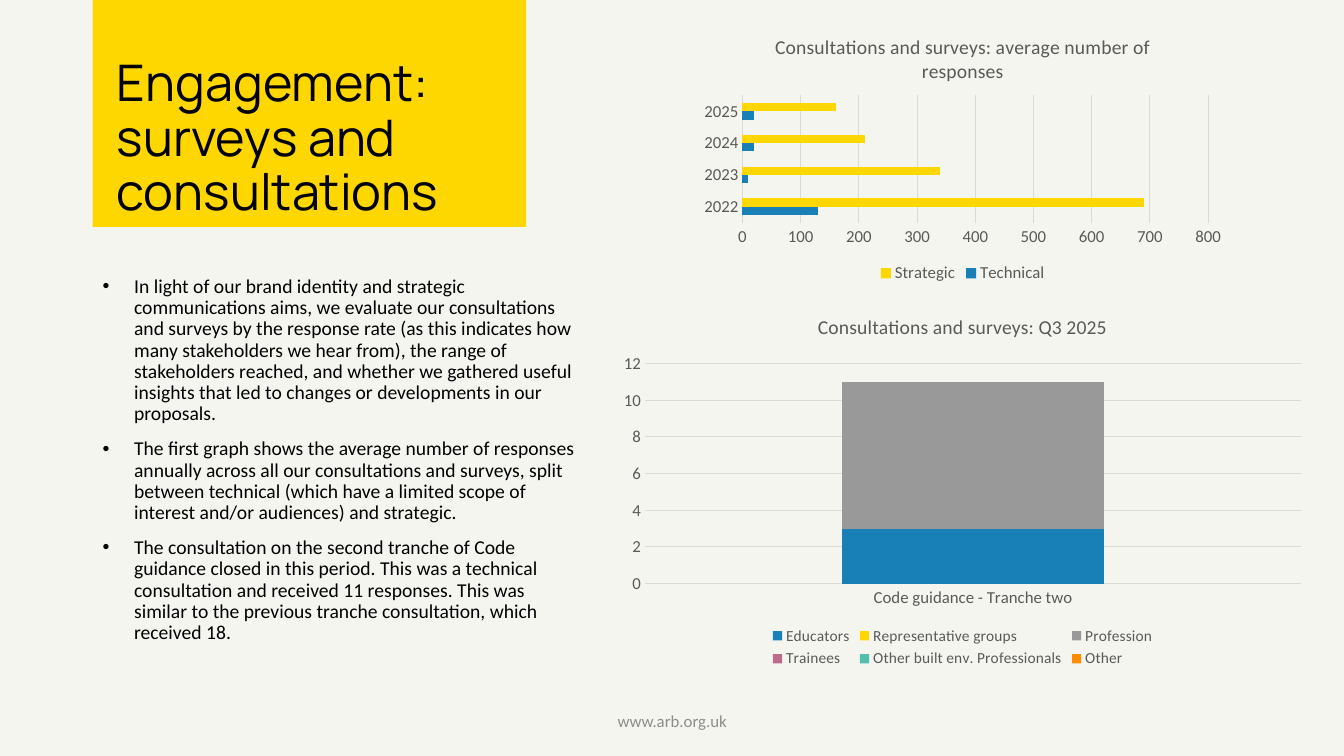
"""Build the engagement slide on surveys and consultations."""
from lxml import etree
from pptx import Presentation
from pptx.chart.data import CategoryChartData
from pptx.dml.color import RGBColor
from pptx.enum import chart as kinds, text
from pptx.oxml import ns
from pptx.util import Pt

PAPER = RGBColor(0xF5, 0xF5, 0xEF)
BLACK = RGBColor(0, 0, 0)
YELLOW = RGBColor(0xFF, 0xD7, 0x00)
BLUE = RGBColor(0x19, 0x80, 0xB7)
GREY = RGBColor(0x99, 0x99, 0x99)
PINK = RGBColor(0xBB, 0x6B, 0x8B)
TEAL = RGBColor(0x52, 0xBF, 0xAB)
ORANGE = RGBColor(0xFF, 0x8C, 0x00)
LABEL = RGBColor(0x59, 0x59, 0x59)
RULE = RGBColor(0xD9, 0xD9, 0xD9)
FOOTER = RGBColor(0x8C, 0x8C, 0x8C)

TITLE = "Engagement: surveys and consultations"
POINTS = [
    "In light of our brand identity and strategic communications aims, we evaluate our "
    "consultations and surveys by the response rate (as this indicates how many stakeholders "
    "we hear from), the range of stakeholders reached, and whether we gathered useful insights "
    "that led to changes or developments in our proposals.",
    "The first graph shows the average number of responses annually across all our "
    "consultations and surveys, split between technical (which have a limited scope of "
    "interest and/or audiences) and strategic.",
    "The consultation on the second tranche of Code guidance closed in this period. This was a "
    "technical consultation and received 11 responses. This was similar to the previous "
    "tranche consultation, which received 18.",
]
WEBSITE = "www.arb.org.uk"
CHARTS = [
    {
        "title": "Consultations and surveys: average number of responses",
        "kind": kinds.XL_CHART_TYPE.BAR_CLUSTERED,
        "place": (495.4, 13.7, 384.5, 191.5),
        "categories": ["2022", "2023", "2024", "2025"],
        "series": [
            ("Technical", [130, 10, 20, 20], BLUE),
            ("Strategic", [690, 340, 210, 160], YELLOW),
        ],
        "plot": {"gap_width": 182, "overlap": 0},
        "scale": {"minimum_scale": 0, "maximum_scale": 800, "major_unit": 100},
        "legend_size": 12,
    },
    {
        "title": "Consultations and surveys: Q3 2025",
        "kind": kinds.XL_CHART_TYPE.COLUMN_STACKED,
        "place": (435.6, 212.4, 504, 267.8),
        "categories": ["Code guidance - Tranche two"],
        "series": [
            ("Educators", [3], BLUE),
            ("Representative groups", [None], YELLOW),
            ("Profession", [8], GREY),
            ("Trainees", [None], PINK),
            ("Other built env. Professionals", [None], TEAL),
            ("Other", [None], ORANGE),
        ],
        "plot": {"gap_width": 150, "overlap": 100},
        "scale": {"minimum_scale": 0, "maximum_scale": 12, "major_unit": 2},
        "legend_size": 11,
    },
]


def assign(target, values):
    for name, value in values.items():
        setattr(target, name, value)


def style_font(font, size, color, name="Calibri"):
    assign(font, {"size": Pt(size), "name": name, "bold": False})
    font.color.rgb = color


def place(shape, left, top, width, height):
    assign(shape, {"left": Pt(left), "top": Pt(top), "width": Pt(width), "height": Pt(height)})


def add_box(page, *area):
    frame = page.shapes.add_textbox(*map(Pt, area)).text_frame
    frame.word_wrap = True
    return frame


def add_title(page):
    title = page.shapes.title
    place(title, 66.2, 0, 309.6, 162)
    title.fill.solid()
    title.fill.fore_color.rgb = YELLOW
    frame = title.text_frame
    frame.text = TITLE
    assign(frame, {
        "auto_size": text.MSO_AUTO_SIZE.NONE, "word_wrap": True,
        "vertical_anchor": text.MSO_ANCHOR.BOTTOM,
        "margin_left": Pt(17.3), "margin_right": Pt(7.2),
        "margin_top": Pt(3.6), "margin_bottom": Pt(3.6),
    })
    para = frame.paragraphs[0]
    assign(para, {"alignment": text.PP_ALIGN.LEFT, "line_spacing": 0.9})
    style_font(para.font, 36, BLACK, "Manrope")


def add_points(page):
    frame = add_box(page, 66.2, 194, 352.1, 336)
    for index, point in enumerate(POINTS):
        para = frame.add_paragraph() if index else frame.paragraphs[0]
        para.text = point
        assign(para, {"line_spacing": 0.9, "space_before": Pt(10 if index else 0)})
        settings = para._p.get_or_add_pPr()
        settings.set("marL", str(Pt(22.5)))
        settings.set("indent", str(Pt(-22.5)))
        etree.SubElement(settings, ns.qn("a:buFont")).set("typeface", "Arial")
        etree.SubElement(settings, ns.qn("a:buChar")).set("char", "•")
        style_font(para.font, 14, BLACK)


def add_footer(page):
    frame = add_box(page, 318.2, 500.4, 324, 28.8)
    frame.vertical_anchor = text.MSO_ANCHOR.MIDDLE
    para = frame.paragraphs[0]
    para.text = WEBSITE
    para.alignment = text.PP_ALIGN.CENTER
    style_font(para.font, 12, FOOTER)


def add_graph(page, details):
    data = CategoryChartData()
    data.categories = details["categories"]
    for name, values, _ in details["series"]:
        data.add_series(name, values)
    graph = page.shapes.add_chart(details["kind"], *map(Pt, details["place"]), data).chart
    style_font(graph.font, 10, BLACK)

    graph.has_title = True
    graph.chart_title.include_in_layout = False
    heading = graph.chart_title.text_frame
    heading.text = details["title"]
    style_font(heading.paragraphs[0].font, 14, LABEL)

    graph.has_legend = True
    assign(graph.legend, {
        "position": kinds.XL_LEGEND_POSITION.BOTTOM, "include_in_layout": False})
    style_font(graph.legend.font, details["legend_size"], LABEL)

    for axis in (graph.category_axis, graph.value_axis):
        assign(axis, {"major_tick_mark": kinds.XL_TICK_MARK.NONE,
                      "minor_tick_mark": kinds.XL_TICK_MARK.NONE})
        style_font(axis.tick_labels.font, 12, LABEL)
    assign(graph.value_axis, details["scale"])
    graph.value_axis.has_major_gridlines = True
    graph.value_axis.format.line.fill.background()
    for line in (graph.category_axis.format.line, graph.value_axis.major_gridlines.format.line):
        line.color.rgb = RULE
        line.width = Pt(0.75)

    plot = graph.plots[0]
    assign(plot, {"vary_by_categories": False, **details["plot"]})
    for series, (_, _, color) in zip(plot.series, details["series"]):
        series.invert_if_negative = False
        series.format.fill.solid()
        series.format.fill.fore_color.rgb = color


def main():
    deck = Presentation()
    assign(deck, {"slide_width": Pt(960), "slide_height": Pt(540)})
    page = deck.slides.add_slide(deck.slide_layouts[5])
    page.background.fill.solid()
    page.background.fill.fore_color.rgb = PAPER
    add_title(page)
    add_points(page)
    add_footer(page)
    for details in CHARTS:
        add_graph(page, details)
    deck.save("out.pptx")


if __name__ == "__main__":
    main()
